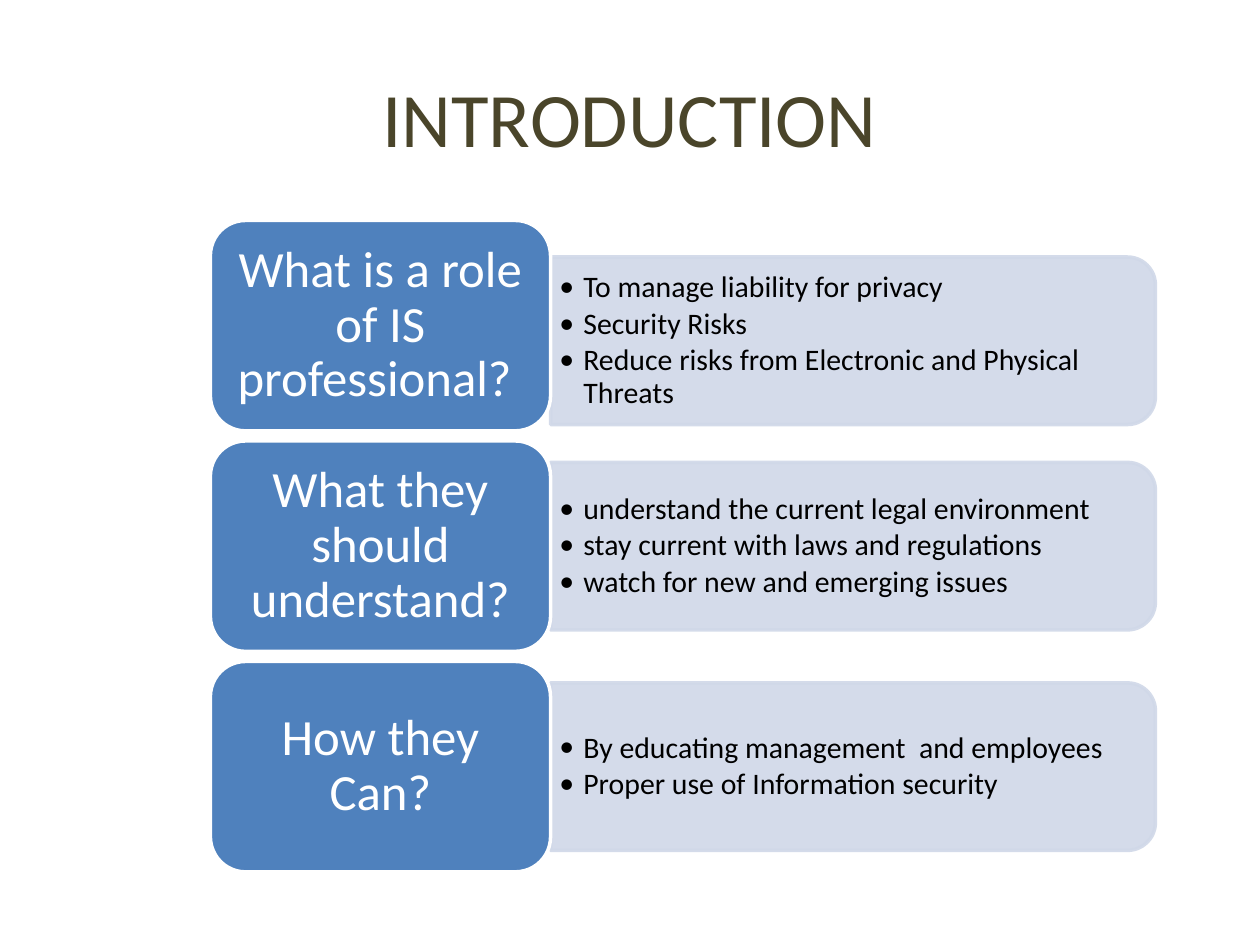
from lxml import etree
from pptx import Presentation
from pptx.dml.color import RGBColor
from pptx.enum.shapes import MSO_SHAPE
from pptx.enum.text import MSO_ANCHOR, PP_ALIGN
from pptx.oxml.ns import qn
from pptx.util import Inches, Pt

ROUND = MSO_SHAPE.ROUNDED_RECTANGLE
TAB = MSO_SHAPE.ROUND_2_SAME_RECTANGLE
MIDDLE = MSO_ANCHOR.MIDDLE
LEFT, CENTER = PP_ALIGN.LEFT, PP_ALIGN.CENTER

COLORS = {"title": "4A452A", "card": "4F81BD", "panel": "D0D8E8",
          "white": "FFFFFF", "text": "000000"}
FONT = "Calibri"
CARD = {"size": Pt(29), "color": "white", "align": CENTER, "after": Pt(10)}
LIST = {"size": Pt(17), "color": "text", "align": LEFT, "after": Pt(2.5)}

# Question, points, gap from the card's top to the panel's top
ROWS = [
    ("What is a role of IS professional? ",
     ["To manage liability for privacy", "Security Risks",
      "Reduce risks from Electronic and Physical Threats"], 0.29),
    ("What they should understand?",
     ["understand the current legal environment",
      "stay current with laws and regulations",
      "watch for new and emerging issues"], 0.17),
    ("How they Can?",
     ["By educating management  and employees",
      "Proper use of Information security"], 0.17),
]


def rgb(name):
    return RGBColor.from_string(COLORS[name])


def set_frame(frame, side, edge):
    form = {"word_wrap": True, "vertical_anchor": MIDDLE,
            "margin_left": Inches(side), "margin_right": Inches(side),
            "margin_top": Inches(edge), "margin_bottom": Inches(edge)}
    for key, value in form.items():
        setattr(frame, key, value)


def write(para, text, look):
    para.alignment = look["align"]
    para.line_spacing = 0.9
    para.space_after = look["after"]
    run = para.add_run()
    run.text = text
    run.font.name = FONT
    run.font.size = look["size"]
    run.font.color.rgb = rgb(look["color"])


def add_bullet(para):
    props = para._p.get_or_add_pPr()
    indent = Inches(0.19)
    props.set("marL", str(indent))
    props.set("indent", str(-indent))
    etree.SubElement(props, qn("a:buFont")).set("typeface", FONT)
    etree.SubElement(props, qn("a:buChar")).set("char", "•")


def fade(shape, percent):
    for color in shape._element.spPr.iter(qn("a:srgbClr")):
        etree.SubElement(color, qn("a:alpha")).set("val", str(percent * 1000))


def add_block(slide, kind, box, fill, line):
    shape = slide.shapes.add_shape(kind, *map(Inches, box))
    shape.shadow.inherit = False
    shape.fill.solid()
    shape.fill.fore_color.rgb = rgb(fill)
    shape.line.color.rgb = rgb(line)
    shape.line.width = Pt(2)
    return shape


def add_title(slide, left, top, width, height):
    title = slide.shapes.title
    place = {"left": left, "top": top, "width": width, "height": height}
    for key, value in place.items():
        setattr(title, key, Inches(value))
    title.text_frame.text = "INTRODUCTION"
    title.text_frame.vertical_anchor = MIDDLE
    para = title.text_frame.paragraphs[0]
    para.alignment = CENTER
    para.font.name = FONT
    para.font.size = Pt(44)
    para.font.color.rgb = rgb("title")


def add_panel(slide, points, left, top, width, height):
    # The tab is turned a quarter, so its sides swap about the centre
    shift = (width - height) / 2
    box = (left + shift, top - shift, height, width)
    tab = add_block(slide, TAB, box, "panel", "panel")
    tab.rotation = 90
    fade(tab, 90)

    # Bulleted points
    inset = 0.07
    area = (left, top + inset, width - inset, height - 2 * inset)
    frame = slide.shapes.add_textbox(*map(Inches, area)).text_frame
    set_frame(frame, 0.07, 0.04)
    for i, point in enumerate(points):
        para = frame.add_paragraph() if i else frame.paragraphs[0]
        write(para, point, LIST)
        add_bullet(para)


def add_card(slide, text, box):
    # The rounded corners already inset the text a little
    card = add_block(slide, ROUND, box, "card", "white")
    set_frame(card.text_frame, 0.12, 0.06)
    write(card.text_frame.paragraphs[0], text, CARD)


def add_rows(slide, left, top, width, height):
    gap, split = 0.08, 2.7
    tall = (height - gap * (len(ROWS) - 1)) / len(ROWS)
    for i, (text, points, drop) in enumerate(ROWS):
        y = top + i * (tall + gap)
        add_panel(slide, points, left + split, y + drop, width - split, 1.33)
        add_card(slide, text, (left, y, split, tall))


def main():
    deck = Presentation()
    deck.slide_width, deck.slide_height = Inches(10), Inches(7.5)
    slide = deck.slides.add_slide(deck.slide_layouts[5])
    add_title(slide, 0.5, 0.3, 9, 1.25)
    add_rows(slide, 1.67, 1.75, 7.5, 5.17)
    deck.save("out.pptx")


if __name__ == "__main__":
    main()
